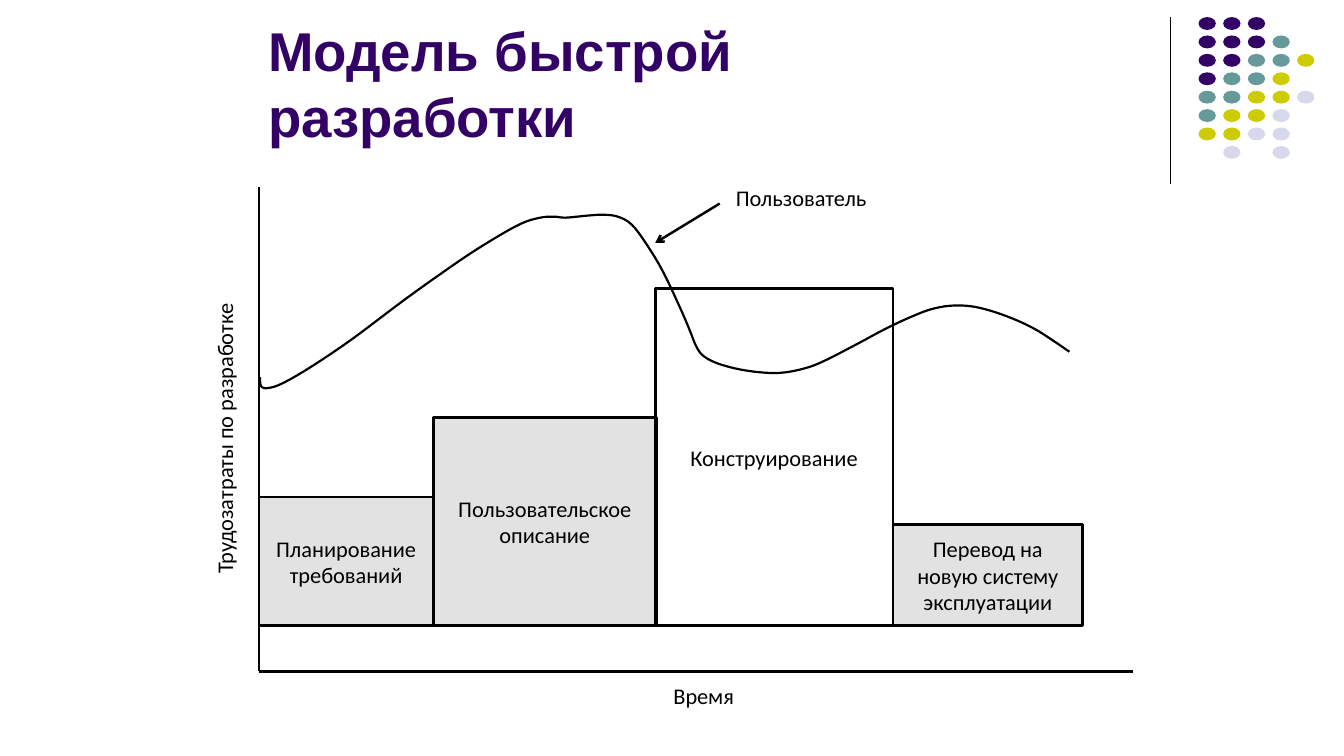
import pptx
import pptx.dml.color
import pptx.enum.shapes
import pptx.enum.text
import pptx.oxml.ns
import pptx.util
from lxml import etree

Pt = pptx.util.Pt
ALIGN = pptx.enum.text.PP_ALIGN
ANCHOR = pptx.enum.text.MSO_ANCHOR
SHAPES = pptx.enum.shapes.MSO_SHAPE

BLACK, GREY, PURPLE = "000000", "E2E2E2", "330066"
DOT_COLOURS = {"P": PURPLE, "T": "669999", "Y": "CCCC00", "L": "D8D8EC"}
DOT_ROWS = ["PPP", "PPPT", "PPTTY", "PTTY", "TTYYL", "TYYL", "YYLL", ".L.L"]

PHASES = [
    ("Пользовательское описание", 309.6, 298.1, 159.1, 149, GREY),
    ("Планирование требований", 185, 355, 124.6, 92.1, GREY),
    ("Конструирование", 468, 205.9, 169.9, 241.2, None),
    ("Перевод на новую систему эксплуатации", 637.9, 374.4, 135.4, 72.7, GREY),
]

USER_CURVE = [
    (185.8, 269.3), (186.5, 275.8), (191.5, 277.2), (202.3, 273.6),
    (223.2, 261.4), (252, 241.9), (289.4, 213.8), (326.9, 187.2),
    (351.4, 171.4), (372.2, 159.8), (385.9, 155.5), (396, 154.8),
    (403.9, 155.5), (419, 154.1), (430.6, 153.4), (441.4, 154.8),
    (451.4, 160.6), (462.2, 175), (473.8, 194.4), (486, 220.3),
    (492.5, 235.4), (497.5, 247.7), (503.3, 254.9), (515.5, 260.6),
    (535, 265), (556.6, 266.4), (576, 262.8), (590.4, 257),
    (612.7, 245.5), (632.9, 234.7), (653, 225.4), (667.4, 220.3),
    (682.6, 218.2), (698.4, 219.6), (717.8, 225.4), (737.3, 234),
    (752.4, 243.4), (763.9, 251.3),
]


def colour(hex_code):
    return pptx.dml.color.RGBColor.from_string(hex_code)


def write(frame, text, size=16, font="Calibri", ink=BLACK, bold=False,
          align=ALIGN.LEFT, anchor=ANCHOR.TOP, side=0, spacing=None, wrap=True):
    frame.word_wrap = wrap
    frame.auto_size = pptx.enum.text.MSO_AUTO_SIZE.NONE
    frame.vertical_anchor = anchor
    frame.margin_left = frame.margin_right = Pt(side)
    frame.margin_top = frame.margin_bottom = 0
    paragraph = frame.paragraphs[0]
    paragraph.alignment = align
    if spacing:
        paragraph.line_spacing = Pt(spacing)
    run = paragraph.add_run()
    run.text = text
    run.font.size = Pt(size)
    run.font.name = font
    run.font.bold = bold
    run.font.color.rgb = colour(ink)


def paint(shape, fill=None, line=None, width=2.04):
    shape.shadow.inherit = False
    if fill:
        shape.fill.solid()
        shape.fill.fore_color.rgb = colour(fill)
    else:
        shape.fill.background()
    if line:
        shape.line.color.rgb = colour(line)
        shape.line.width = Pt(width)
    else:
        shape.line.fill.background()


def add_title(slide, text):
    title = slide.shapes.title
    title.left, title.top, title.width, title.height = Pt(191.5), Pt(55.4), Pt(481.7), Pt(50.4)
    write(title.text_frame, text, size=39, font="Arial", ink=PURPLE, bold=True,
          anchor=ANCHOR.BOTTOM, spacing=47)


def add_label(slide, text, left, top, width, height, vertical=False):
    label = slide.shapes.add_textbox(Pt(left), Pt(top), Pt(width), Pt(height))
    write(label.text_frame, text, wrap=False)
    if vertical:
        label.text_frame._txBody.bodyPr.set("vert", "vert270")


def add_line(slide, x1, y1, x2, y2, width=2.04, arrow=False):
    line = slide.shapes.add_connector(
        pptx.enum.shapes.MSO_CONNECTOR.STRAIGHT, Pt(x1), Pt(y1), Pt(x2), Pt(y2))
    line.line.color.rgb = colour(BLACK)
    line.line.width = Pt(width)
    properties = line._element.spPr
    if arrow:
        etree.SubElement(line.line._get_or_add_ln(),
                         pptx.oxml.ns.qn("a:tailEnd"), type="arrow")
    etree.SubElement(properties, pptx.oxml.ns.qn("a:effectLst"))


def add_phase(slide, text, left, top, width, height, fill):
    phase = slide.shapes.add_shape(SHAPES.RECTANGLE, Pt(left), Pt(top), Pt(width), Pt(height))
    paint(phase, fill, BLACK)
    write(phase.text_frame, text, align=ALIGN.CENTER, anchor=ANCHOR.MIDDLE, side=12)


def add_dots(slide):
    for row, codes in enumerate(DOT_ROWS):
        for column, code in enumerate(codes):
            if code in DOT_COLOURS:
                dot = slide.shapes.add_shape(
                    SHAPES.OVAL, Pt(856.1 + 17.6 * column), Pt(12.2 + 13.15 * row),
                    Pt(12.4), Pt(9.2))
                paint(dot, DOT_COLOURS[code])


def smooth(knots, steps=4):
    padded = [knots[0], *knots, knots[-1]]
    points = [knots[0]]
    for a, b, c, d in zip(padded, padded[1:], padded[2:], padded[3:]):
        for step in range(1, steps + 1):
            t = step / steps
            points.append(tuple(
                q + t * (r - p) / 2 + t**2 * (2 * p - 5 * q + 4 * r - s) / 2
                + t**3 * (3 * q - p - 3 * r + s) / 2
                for p, q, r, s in zip(a, b, c, d)))
    return points


def add_curve(slide, knots):
    points = [(Pt(x), Pt(y)) for x, y in smooth(knots)]
    builder = slide.shapes.build_freeform(*points[0])
    builder.add_line_segments(points[1:], close=False)
    paint(builder.convert_to_shape(), line=BLACK, width=1.56)


def main():
    deck = pptx.Presentation()
    deck.slide_width, deck.slide_height = Pt(960), Pt(540)
    slide = deck.slides.add_slide(deck.slide_layouts[5])

    add_line(slide, 835.9, 12.2, 835.9, 131.8, width=0.75)
    add_dots(slide)
    add_title(slide, "Модель быстрой разработки")
    add_line(slide, 185, 133.9, 185, 479.5)
    add_line(slide, 185, 479.5, 809.3, 479.5)
    for phase in PHASES:
        add_phase(slide, *phase)
    add_label(slide, "Время", 481, 487, 45.4, 20.9)
    add_label(slide, "Трудозатраты по разработке", 150.5, 214.6, 18, 195.1, vertical=True)
    add_curve(slide, USER_CURVE)
    add_label(slide, "Пользователь", 525.6, 131.3, 95.8, 20.9)
    add_line(slide, 514.1, 145.4, 468, 173.5, width=1.75, arrow=True)
    deck.save("out.pptx")


if __name__ == "__main__":
    main()
